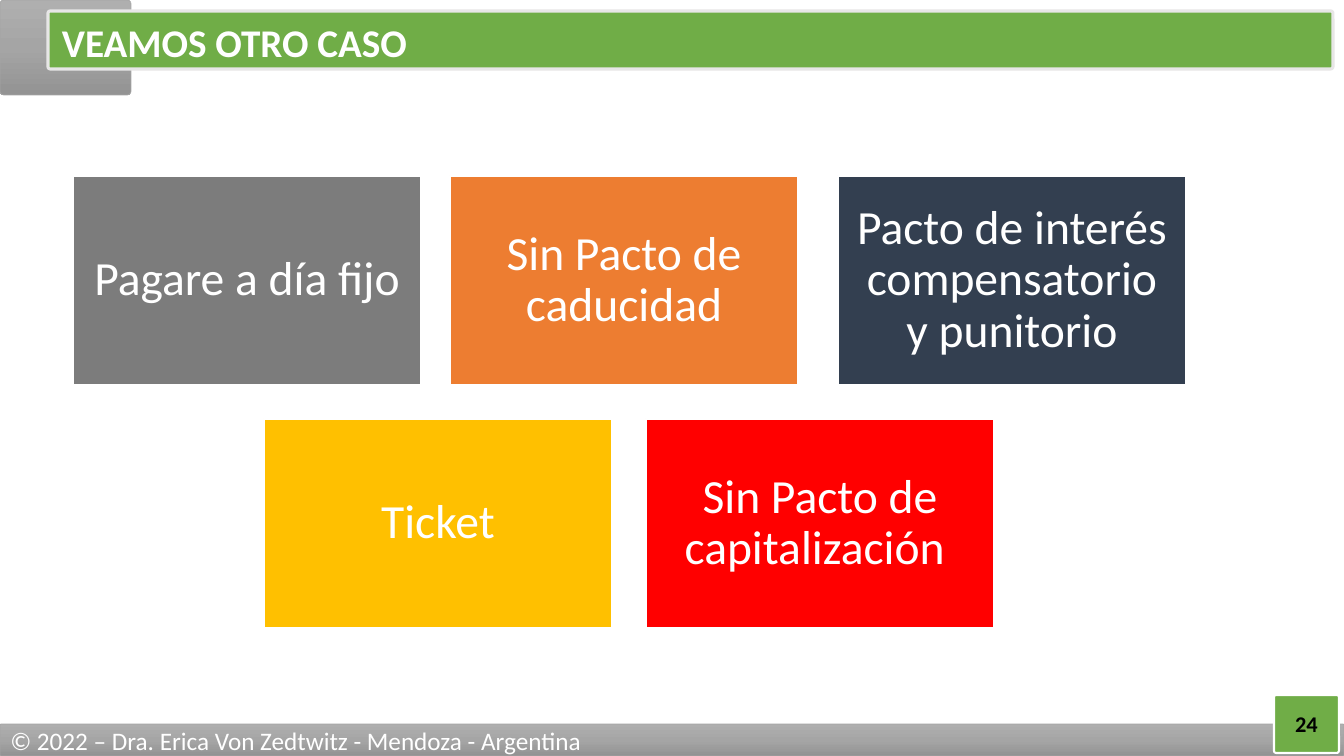
import copy
import dataclasses
import typing

import pptx
import pptx.dml.color
import pptx.enum.shapes
import pptx.enum.text
import pptx.oxml.ns
import pptx.util

PX = 914400 / 100.8  # EMU in one px
FONT = "Calibri"
COLOURS = {
    "white": "FFFFFF", "black": "000000", "green": "70AD47", "pale": "E7E6E6",
    "silver": "AFAFAF", "grey": "A5A5A5", "steel": "939393",
    "slate": "7C7C7C", "orange": "ED7D31", "navy": "333F50",
    "gold": "FFC000", "red": "FF0000",
}
METAL = ("silver", "grey", "steel")
CENTER = pptx.enum.text.PP_ALIGN.CENTER
LEFT = pptx.enum.text.PP_ALIGN.LEFT


@dataclasses.dataclass
class Label:
    text: str
    size: int
    colour: str = "white"
    bold: bool = False
    align: typing.Any = LEFT
    spacing: float = 1.0
    inset: typing.Optional[int] = None


@dataclasses.dataclass
class Box:
    left: int
    top: int
    width: int
    height: int
    fills: tuple[str, ...]
    line: str
    line_width: float
    label: typing.Optional[Label] = None
    rounded: bool = True


def px(length: int) -> int:
    return round(length * PX)


def rgb(name: str) -> pptx.dml.color.RGBColor:
    return pptx.dml.color.RGBColor.from_string(COLOURS[name])


def write_label(shape: typing.Any, label: Label) -> None:
    frame = shape.text_frame
    frame.word_wrap = True
    frame.vertical_anchor = pptx.enum.text.MSO_ANCHOR.MIDDLE
    if label.inset is not None:
        frame.margin_left = frame.margin_right = px(label.inset)
        frame.margin_top = frame.margin_bottom = px(label.inset)
    paragraph = frame.paragraphs[0]
    paragraph.alignment = label.align
    paragraph.line_spacing = label.spacing
    run = paragraph.add_run()
    run.text = label.text
    run.font.name = FONT
    run.font.size = pptx.util.Pt(label.size)
    run.font.bold = label.bold
    run.font.color.rgb = rgb(label.colour)


def fill_gradient(shape: typing.Any, names: tuple[str, ...]) -> None:
    shape.fill.gradient()
    shape.fill.gradient_angle = 270  # counter-clockwise: top to bottom
    stop_list = shape._element.spPr.find(".//" + pptx.oxml.ns.qn("a:gsLst"))
    while len(stop_list) < len(names):
        stop_list.insert(1, copy.deepcopy(stop_list[0]))
    for index, (stop, name) in enumerate(zip(shape.fill.gradient_stops, names)):
        stop.position = index / (len(names) - 1)
        stop.color.rgb = rgb(name)


def draw_box(slide: typing.Any, box: Box) -> None:
    kinds = pptx.enum.shapes.MSO_SHAPE
    kind = kinds.ROUNDED_RECTANGLE if box.rounded else kinds.RECTANGLE
    shape = slide.shapes.add_shape(
        kind, px(box.left), px(box.top), px(box.width), px(box.height))
    shape.shadow.inherit = False
    if box.rounded:
        shape.adjustments[0] = 0.04
    if len(box.fills) > 1:
        fill_gradient(shape, box.fills)
    else:
        shape.fill.solid()
        shape.fill.fore_color.rgb = rgb(box.fills[0])
    shape.line.color.rgb = rgb(box.line)
    shape.line.width = pptx.util.Pt(box.line_width)
    if box.label:
        write_label(shape, box.label)


def draw_title(slide: typing.Any, text: str) -> None:
    title = slide.shapes.add_textbox(px(52), px(20), px(1280), px(49))
    write_label(title, Label(text, 28, bold=True, spacing=0.9))


def card(left: int, top: int, fill: str, text: str) -> Box:
    label = Label(text, 34, align=CENTER, spacing=0.9, inset=14)
    return Box(left, top, 348, 209, (fill,), "white", 1, label, rounded=False)


# Header, footer and page number
FRAME = [
    Box(0, 0, 131, 95, METAL, "grey", 0.5),
    Box(48, 11, 1285, 58, ("green",), "pale", 2.25),
    Box(0, 724, 1344, 32, METAL, "grey", 0.5,
        Label("© 2022 – Dra. Erica Von Zedtwitz - Mendoza - Argentina", 18)),
    Box(1274, 695, 65, 58, ("green",), "white", 1.5,
        Label("24", 16, "black", bold=True, align=CENTER)),
]

# Features of the case, in two rows
UPPER, LOWER = 176, 419
CARDS = [
    card(73, UPPER, "slate", "Pagare a día fijo"),
    card(450, UPPER, "orange", "Sin Pacto de caducidad"),
    card(838, UPPER, "navy", "Pacto de interés compensatorio y punitorio"),
    card(264, LOWER, "gold", "Ticket"),
    card(646, LOWER, "red", "Sin Pacto de capitalización "),
]


def main() -> None:
    presentation = pptx.Presentation()
    presentation.slide_width = px(1344)
    presentation.slide_height = px(756)
    slide = presentation.slides.add_slide(presentation.slide_layouts[6])
    for box in FRAME:
        draw_box(slide, box)
    draw_title(slide, "VEAMOS OTRO CASO")
    for box in CARDS:
        draw_box(slide, box)
    presentation.save("out.pptx")


if __name__ == "__main__":
    main()
